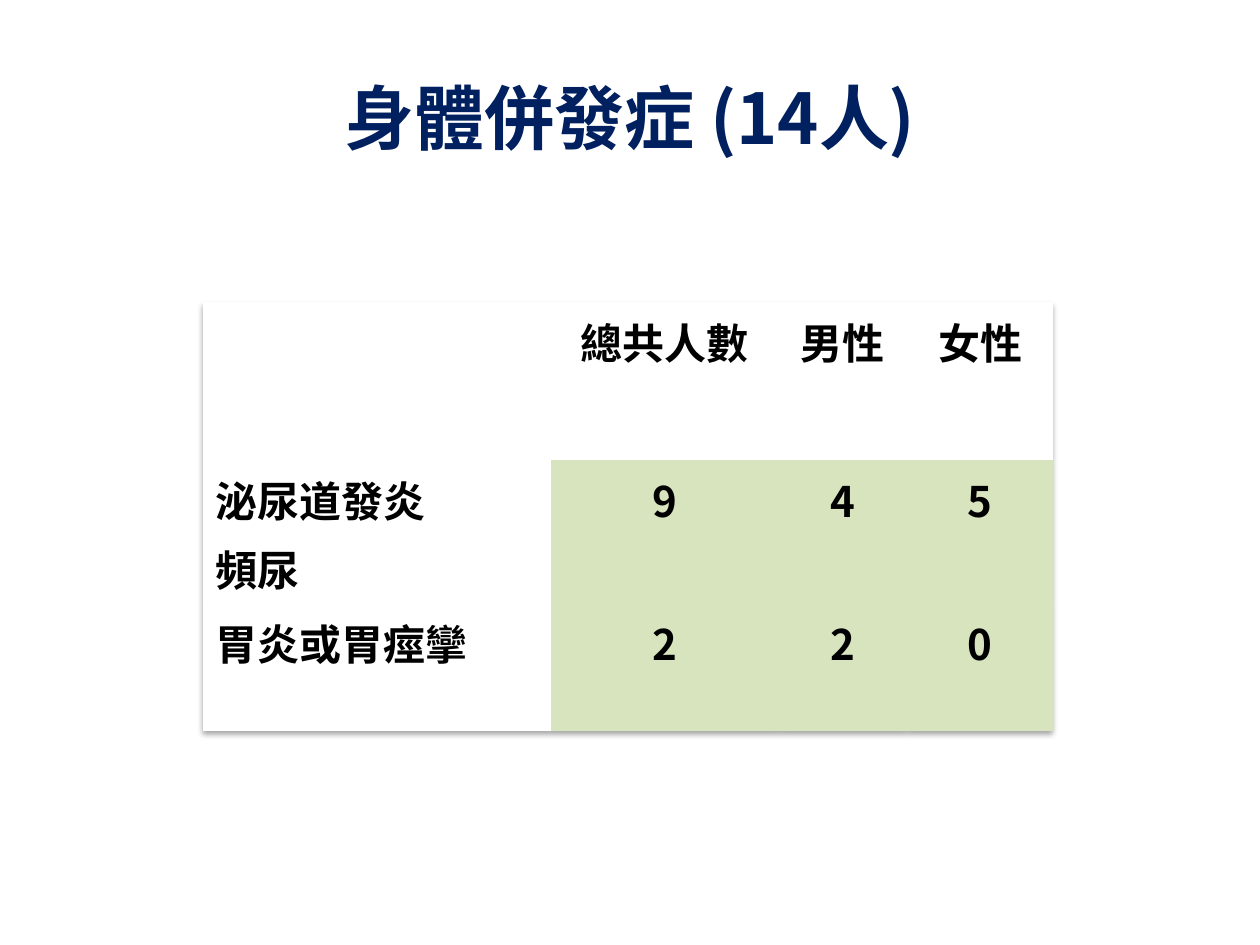
from dataclasses import dataclass

from lxml.etree import SubElement
from pptx import Presentation
from pptx.dml.color import RGBColor as Rgb
from pptx.enum.text import MSO_ANCHOR as Anchor, PP_ALIGN as Align
from pptx.oxml import parse_xml
from pptx.oxml.ns import qn
from pptx.util import Inches, Pt

WIDTH, HEIGHT = 10, 7.5
NO_GRID = "{2D5ABB26-0587-4C30-8999-92F81FD0307C}"
SHADOW = (
    '<a:effectLst xmlns:a="http://schemas.openxmlformats.org/drawingml/2006/main">'
    '<a:outerShdw blurRad="40000" dist="23000" dir="5400000" rotWithShape="0">'
    '<a:srgbClr val="000000"><a:alpha val="35000"/></a:srgbClr>'
    '</a:outerShdw></a:effectLst>'
)


@dataclass
class Theme:
    face: str = "Noto Sans CJK SC"
    navy: str = "002060"
    ink: str = "000000"
    plain: str = "FFFFFF"
    green: str = "D7E4BD"
    head: int = 40
    body: int = 24


class Deck:
    """Holds the theme and the current slide."""

    def __init__(self, theme):
        self.theme = theme
        self.file = Presentation()
        self.file.slide_width = Inches(WIDTH)
        self.file.slide_height = Inches(HEIGHT)
        self.slide = self.file.slides.add_slide(self.file.slide_layouts[5])

    def area(self, x, y, w, h):
        """Turn shares of the slide into lengths."""
        return [Inches(v) for v in (x * WIDTH, y * HEIGHT, w * WIDTH, h * HEIGHT)]

    def style(self, para, size, color, align):
        para.alignment = align
        for run in para.runs:
            font = run.font
            font.name, font.size, font.bold = self.theme.face, Pt(size), True
            font.color.rgb = Rgb.from_string(color)
            SubElement(font._element, qn("a:ea")).set("typeface", self.theme.face)

    def title(self, text, *place):
        shape = self.slide.shapes.title
        shape.left, shape.top, shape.width, shape.height = self.area(*place)
        frame = shape.text_frame
        frame.text = text
        frame.vertical_anchor = Anchor.MIDDLE
        self.style(frame.paragraphs[0], self.theme.head, self.theme.navy, Align.CENTER)

    def cell(self, cell, text, fill, align):
        cell.fill.solid()
        cell.fill.fore_color.rgb = Rgb.from_string(fill)
        cell.margin_top, cell.margin_bottom = Inches(0.07), Inches(0.03)
        if not text:
            return
        cell.text_frame.text = text
        for i, para in enumerate(cell.text_frame.paragraphs):
            if i:
                para.space_before = Pt(self.theme.body * 0.2)
            self.style(para, self.theme.body, self.theme.ink, align)

    def table(self, data, cols, rows, *place):
        frame = self.slide.shapes.add_table(len(rows), len(cols), *self.area(*place))
        table = frame.table
        table.first_row = table.horz_banding = False
        for col, width in zip(table.columns, cols):
            col.width = Inches(width)
        for row, height in zip(table.rows, rows):
            row.height = Inches(height)

        # Clear grid and a soft shadow below
        props = table._tbl.tblPr
        props.find(qn("a:tableStyleId")).text = NO_GRID
        props.insert(0, parse_xml(SHADOW))

        # Labels on white, counts on green
        for r, line in enumerate(data):
            for c, text in enumerate(line):
                fill = self.theme.green if r and c else self.theme.plain
                align = Align.CENTER if c else Align.LEFT
                self.cell(table.cell(r, c), text, fill, align)

    def save(self):
        self.file.save("out.pptx")


def main():
    deck = Deck(Theme())

    # Heading
    deck.title("身體併發症 (14人)", 0.05, 0.04, 0.9, 1 / 6)

    # Patient counts
    counts = [
        ("", "總共人數", "男性", "女性"),
        ("泌尿道發炎\n頻尿", "9", "4", "5"),
        ("胃炎或胃痙攣", "2", "2", "0"),
    ]
    deck.table(counts, (2.76, 1.81, 1.02, 1.16), (1.25, 1.02, 1.02),
               0.161, 0.32, 0.675, 0.44)
    deck.save()


if __name__ == "__main__":
    main()
